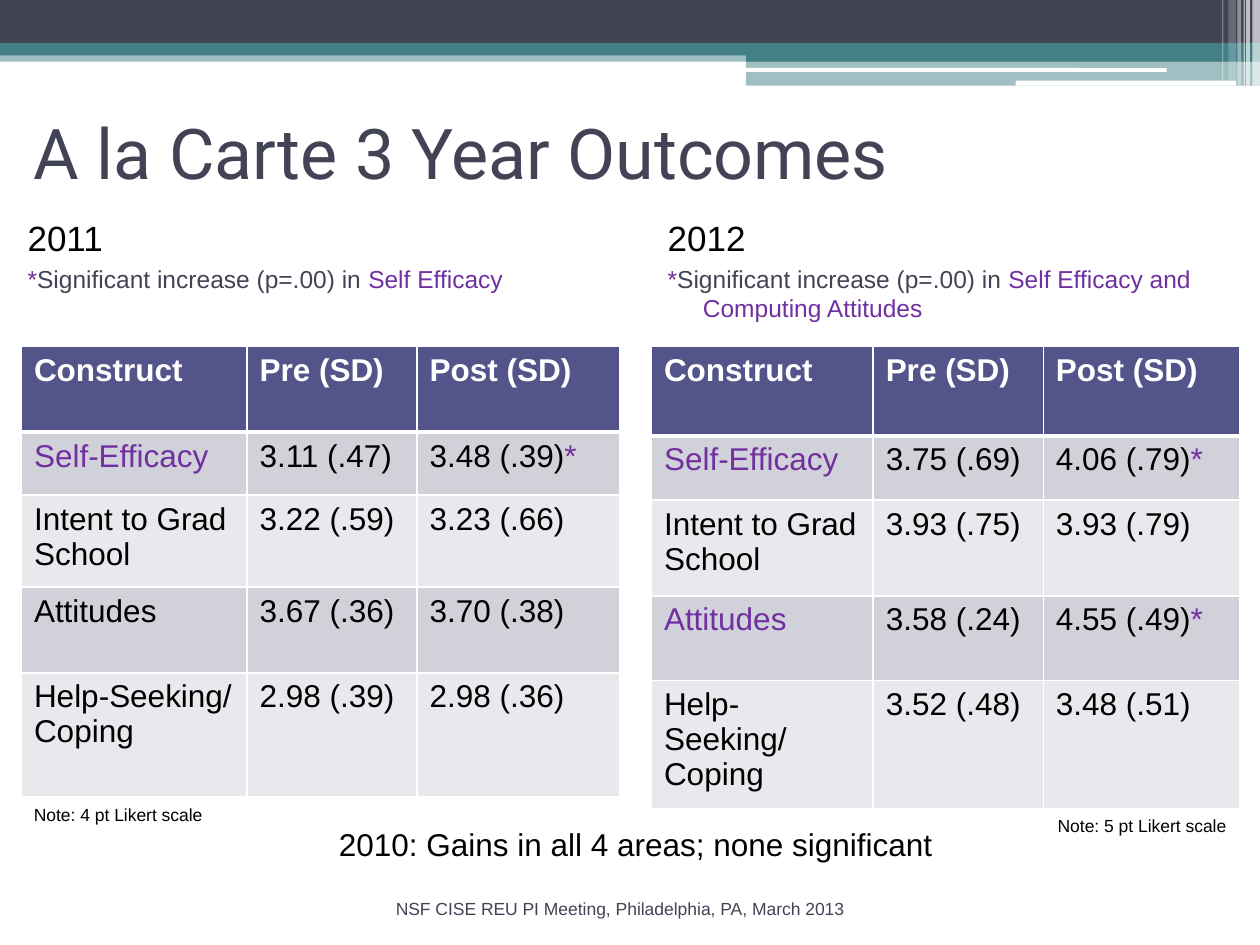
"""Build the slide comparing 2011 and 2012 programme outcomes."""
from lxml.etree import SubElement
from pptx import Presentation
from pptx.dml.color import RGBColor
from pptx.enum.shapes import MSO_SHAPE
from pptx.enum.text import MSO_ANCHOR, PP_ALIGN
from pptx.oxml import parse_xml
from pptx.oxml.ns import nsdecls, qn
from pptx.util import Inches, Pt

WIDTH, HEIGHT = 10, 7.5
COLORS = {
    "slate": "424456", "teal": "438086", "white": "FFFFFF", "black": "000000",
    "purple": "7030A0", "header": "53548A", "odd": "D1D1DA", "even": "E9E9ED",
}
BANDS = [
    ((0, 0.4, WIDTH, 0.09), "teal", 50),
    ((0, 0, WIDTH, 0.34), "slate", 100),
    ((0, 0.34, WIDTH, 0.1), "teal", 100),
    ((5.92, 0.39, 4.08, 0.1), "teal", 100),
    ((5.92, 0.48, 4.08, 0.2), "teal", 50),
]
PILLS = [(5.91, 0.54, 3.35, 0.03), (8.06, 0.64, 1.75, 0.04)]
STRIPES = [
    (9.94, 0.06, 0.68, 65), (9.89, 0.03, 0.68, 65), (9.87, 0.01, 0.68, 60),
    (9.82, 0.03, 0.68, 40), (9.75, 0.06, 0.64, 20), (9.7, 0.01, 0.64, 30),
]
HEADINGS = ["Construct", "Pre (SD)", "Post (SD)"]
CONSTRUCTS = ["Self-Efficacy", "Intent to Grad School", "Attitudes", "Help-Seeking/\nCoping"]
YEARS = [
    {
        "year": "2011", "finding": "Self Efficacy",
        "intro_box": (0, 1.67, 5.25, 1.05), "corner": (0.17, 2.75),
        "columns": [1.79, 1.35, 1.61], "rows": [0.68, 0.5, 0.73, 0.68, 0.98],
        "scores": [("3.11 (.47)", "3.48 (.39)*"), ("3.22 (.59)", "3.23 (.66)"),
                   ("3.67 (.36)", "3.70 (.38)"), ("2.98 (.39)", "2.98 (.36)")],
        "note": "Note: 4 pt Likert scale", "note_box": (0.17, 6.33, 4.08, 0.27),
        "note_align": PP_ALIGN.LEFT,
    },
    {
        "year": "2012", "finding": "Self Efficacy and Computing Attitudes",
        "intro_box": (5.08, 1.67, 4.92, 1.05), "corner": (5.17, 2.75),
        "columns": [1.76, 1.35, 1.56], "rows": [0.71, 0.51, 0.76, 0.67, 1.02],
        "scores": [("3.75 (.69)", "4.06 (.79)*"), ("3.93 (.75)", "3.93 (.79)"),
                   ("3.58 (.24)", "4.55 (.49)*"), ("3.52 (.48)", "3.48 (.51)")],
        "note": "Note: 5 pt Likert scale", "note_box": (5.75, 6.42, 4.08, 0.27),
        "note_align": PP_ALIGN.RIGHT,
    },
]


def rgb(color):
    return RGBColor.from_string(COLORS[color])


def add_bar(slide, box, color, opacity=100, preset=MSO_SHAPE.RECTANGLE):
    bar = slide.shapes.add_shape(preset, *map(Inches, box))
    bar.shadow.inherit = False
    bar.line.fill.background()
    bar.fill.solid()
    bar.fill.fore_color.rgb = rgb(color)
    if opacity < 100:
        tint = bar.fill._xPr.find(qn("a:solidFill"))[0]
        SubElement(tint, qn("a:alpha")).set("val", str(opacity * 1000))


def add_run(paragraph, words, size, color, font="Arial", bold=False):
    run = paragraph.add_run()
    run.text = words
    run.font.size, run.font.name, run.font.bold = Pt(size), font, bold
    run.font.color.rgb = rgb(color)


def add_frame(slide, box):
    frame = slide.shapes.add_textbox(*map(Inches, box)).text_frame
    frame.word_wrap = True
    return frame


def add_line(slide, box, words, size, color="black", align=PP_ALIGN.LEFT, font="Arial"):
    frame = add_frame(slide, box)
    frame.paragraphs[0].alignment = align
    add_run(frame.paragraphs[0], words, size, color, font)
    return frame


def add_intro(slide, box, year, finding):
    frame = add_frame(slide, box)
    lines = [
        [(year, 20, "black")],
        [("*", 14, "purple"), ("Significant increase (p=.00) in ", 14, "slate"),
         (finding, 14, "purple")],
    ]
    for index, line in enumerate(lines):
        paragraph = frame.add_paragraph() if index else frame.paragraphs[0]
        paragraph.space_before = Pt(3)
        properties = paragraph._p.get_or_add_pPr()
        properties.set("marL", str(Inches(0.4)))
        properties.set("indent", str(Inches(-0.28)))
        for run in line:
            add_run(paragraph, *run)


def set_borders(cell, row):
    weights = {"lnL": 1, "lnR": 1, "lnT": 3 if row == 1 else 1, "lnB": 3 if row == 0 else 1}
    for index, (side, weight) in enumerate(weights.items()):
        cell._tc.get_or_add_tcPr().insert(index, parse_xml(
            f'<a:{side} {nsdecls("a")} w="{Pt(weight)}"><a:solidFill>'
            f'<a:srgbClr val="{COLORS["white"]}"/></a:solidFill></a:{side}>'))


def fill_cell(cell, row, words, color):
    cell.fill.solid()
    cell.fill.fore_color.rgb = rgb("header" if row == 0 else "odd" if row % 2 else "even")
    set_borders(cell, row)
    for index, line in enumerate(words.split("\n")):
        frame = cell.text_frame
        paragraph = frame.add_paragraph() if index else frame.paragraphs[0]
        add_run(paragraph, line.rstrip("*"), 18, color, bold=row == 0)
        if line.endswith("*"):
            add_run(paragraph, "*", 18, "purple")


def add_outcomes(slide, corner, columns, heights, scores):
    size = sum(columns), sum(heights)
    table = slide.shapes.add_table(
        len(heights), len(columns), *map(Inches, (*corner, *size))).table
    for column, width in zip(table.columns, columns):
        column.width = Inches(width)
    for row, height in zip(table.rows, heights):
        row.height = Inches(height)
    records = [HEADINGS] + [(name, *pair) for name, pair in zip(CONSTRUCTS, scores)]
    for row, record in enumerate(records):
        significant = record[-1].endswith("*")
        for column, words in enumerate(record):
            color = "white" if row == 0 else "purple" if significant and column == 0 else "black"
            fill_cell(table.cell(row, column), row, words, color)


def main():
    deck = Presentation()
    deck.slide_width, deck.slide_height = Inches(WIDTH), Inches(HEIGHT)
    slide = deck.slides.add_slide(deck.slide_layouts[6])
    for band in BANDS:
        add_bar(slide, *band)
    for pill in PILLS:
        add_bar(slide, pill, "white", preset=MSO_SHAPE.ROUNDED_RECTANGLE)
    for left, width, height, opacity in STRIPES:
        add_bar(slide, (left, 0, width, height), "white", opacity)
    title = add_line(slide, (0.17, 0.58, 9, 1.25), "A la Carte 3 Year Outcomes", 40,
                     "slate", font="Roboto")
    title.vertical_anchor = MSO_ANCHOR.MIDDLE
    for cohort in YEARS:
        add_intro(slide, cohort["intro_box"], cohort["year"], cohort["finding"])
        add_outcomes(slide, cohort["corner"], cohort["columns"], cohort["rows"],
                     cohort["scores"])
        add_line(slide, cohort["note_box"], cohort["note"], 10, align=cohort["note_align"])
    add_line(slide, (0.42, 6.5, 9.25, 0.42), "2010: Gains in all 4 areas; none significant",
             18, align=PP_ALIGN.CENTER)
    add_line(slide, (2.92, 7.08, 4, 0.42),
             "NSF CISE REU PI Meeting, Philadelphia, PA, March 2013", 10, "slate",
             PP_ALIGN.CENTER)
    deck.save("out.pptx")


if __name__ == "__main__":
    main()
